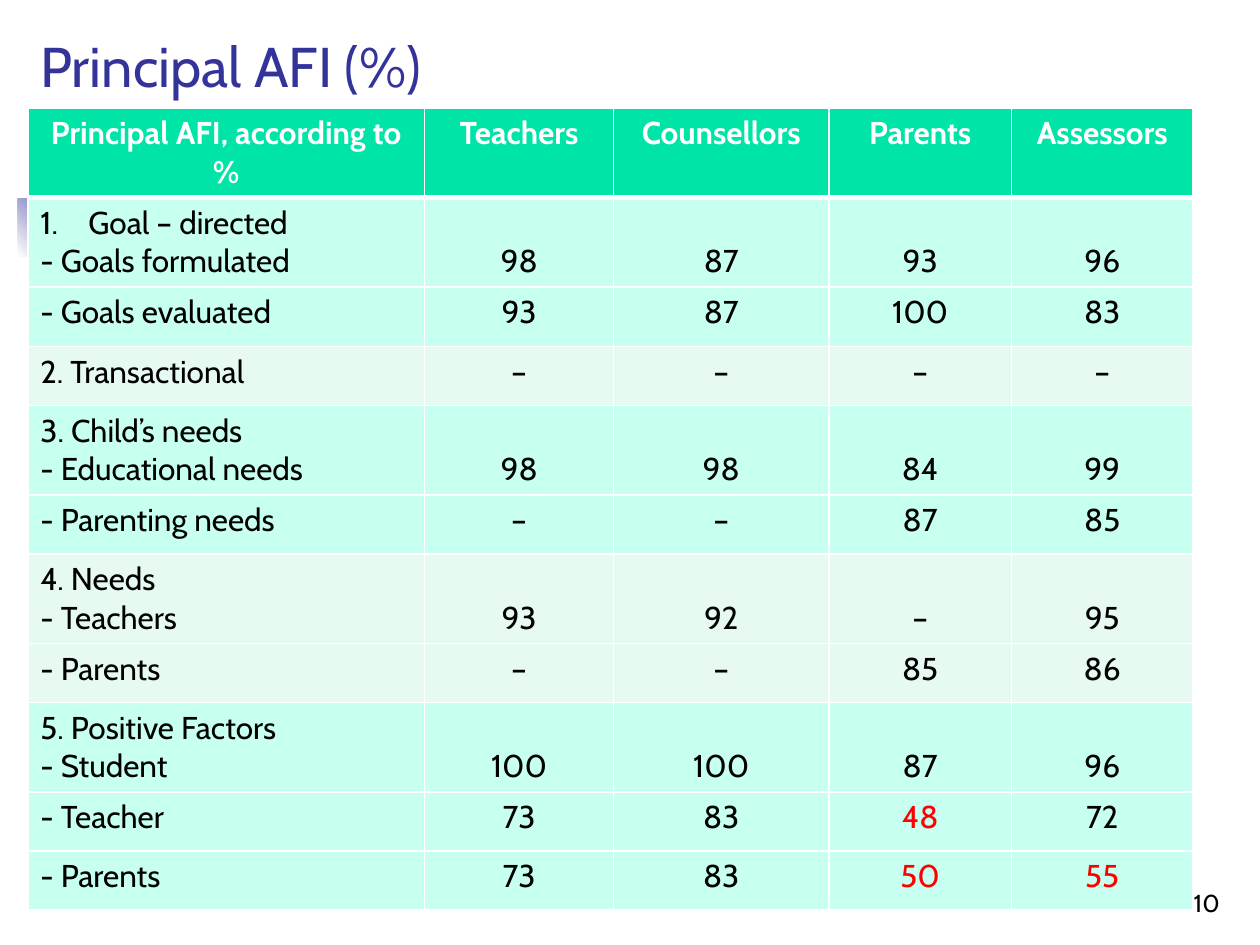
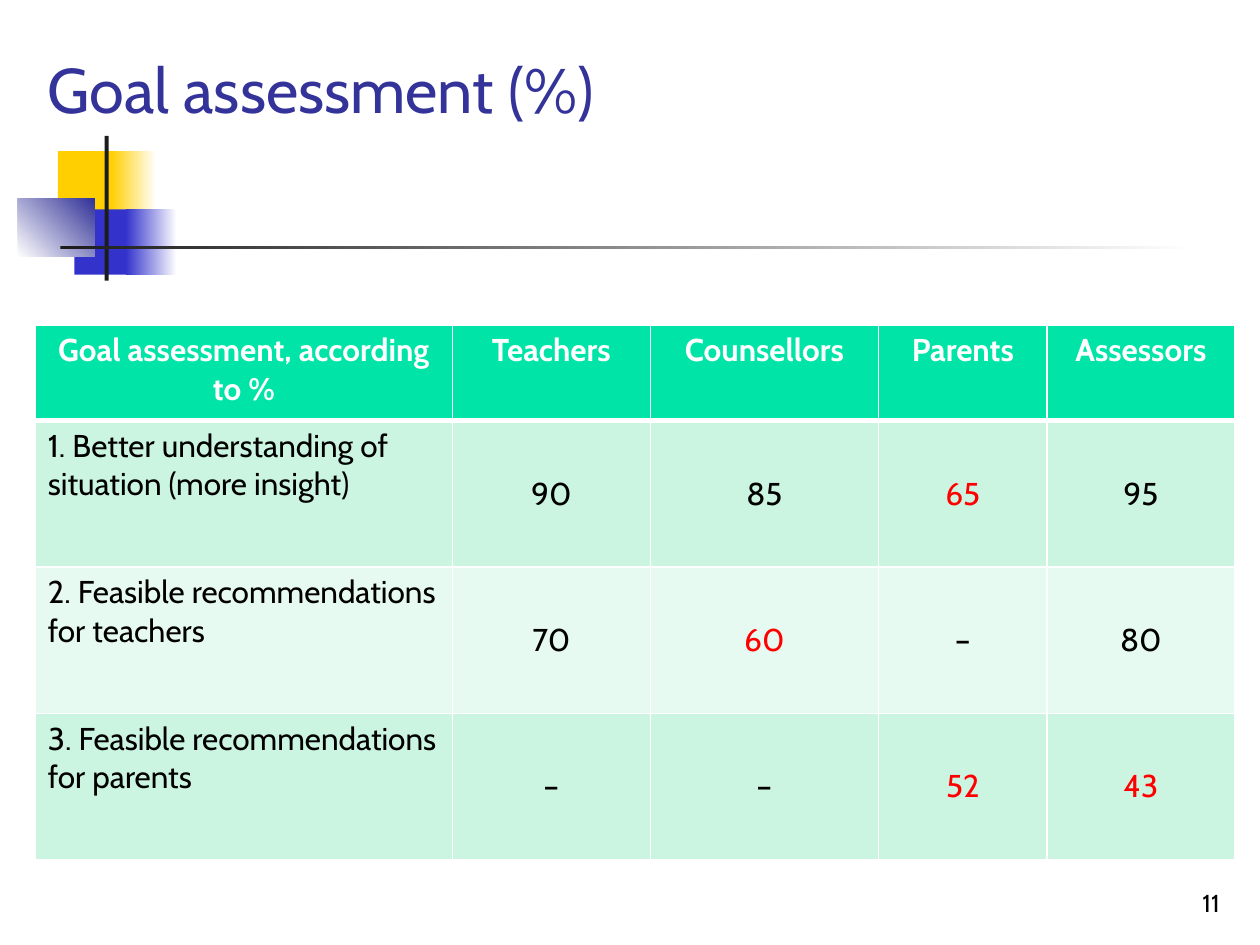
from pptx import Presentation
from pptx.dml.color import RGBColor
from pptx.enum.shapes import MSO_SHAPE as Shape
from pptx.enum.text import MSO_ANCHOR as Anchor, MSO_AUTO_SIZE as Fit, PP_ALIGN as Align
from pptx.oxml.ns import qn
from pptx.util import Cm, Pt
from lxml.etree import SubElement as Sub

FONT = "Cabin"
HUES = {
    "title": "333399", "white": "FFFFFF", "black": "000000", "red": "FF0000",
    "head": "00E4A8", "mint": "C7FFF0", "green": "CCF5E1", "pale": "E7FAF1",
    "gold": "FFCF01", "blue": "3333CC", "ink": "1C1C1C",
}
LOW = 70  # values below this are red
ROLES = ["Teachers", "Counsellors", "Parents", "Assessors"]

# Left, top, width, height in cm; first hue, last hue, angle
DECOR = [
    (1.17, 3.05, 1.22, 1.32, "gold", None, 0),
    (2.24, 3.05, 0.91, 1.32, "gold", "white", 0),
    (1.5, 4.22, 1.17, 1.32, "blue", None, 0),
    (2.54, 4.22, 1.02, 1.32, "blue", "white", 0),
    (0.36, 4.01, 1.55, 1.17, "white", "title", 45),
    (2.11, 2.74, 0.08, 2.92, "ink", None, 0),
    (1.22, 4.95, 22.86, 0.08, "ink", "white", 0),
]

# Each group holds rows of (label lines, values) and has one band colour
SLIDES = [
    {
        "title": "Principal AFI (%)", "size": 32, "box": (0.56, 0.48, 21.64, 1.63),
        "page": 10, "head": "Principal AFI, according to %",
        "at": (0.56, 2.18), "cols": [8, 3.81, 4.34, 3.68, 3.66],
        "top": 1.19, "rows": {1: 1.19, 2: 1.7},
        "bands": ["mint", "pale"], "anchors": {1: Anchor.TOP, 2: Anchor.BOTTOM},
        "numbered": "Goal – directed",
        "groups": [
            [(["Goal – directed", "- Goals formulated"], [98, 87, 93, 96]),
             (["- Goals evaluated"], [93, 87, 100, 83])],
            [(["2. Transactional"], ["–"] * 4)],
            [(["3. Child’s needs", "- Educational needs"], [98, 98, 84, 99]),
             (["- Parenting needs"], ["–", "–", 87, 85])],
            [(["4. Needs", "- Teachers"], [93, 92, "–", 95]),
             (["- Parents"], ["–", "–", 85, 86])],
            [(["5. Positive Factors", "- Student"], [100, 100, 87, 96]),
             (["- Teacher"], [73, 83, 48, 72]),
             (["- Parents"], [73, 83, 50, 55])],
        ],
    },
    {
        "title": "Goal assessment (%)", "size": 36, "box": (0.71, 0.53, 21.64, 2.13),
        "page": 11, "head": "Goal assessment, according to %",
        "at": (0.71, 6.55), "cols": [8.41, 3.99, 4.6, 3.4, 3.78],
        "top": 1.93, "rows": {1: 2.95},
        "bands": ["green", "pale"], "anchors": {1: Anchor.MIDDLE},
        "numbered": None,
        "groups": [
            [(["1. Better understanding of situation (more insight)"], [90, 85, 65, 95])],
            [(["2. Feasible recommendations for teachers"], [70, 60, "–", 80])],
            [(["3. Feasible recommendations for parents"], ["–", "–", 52, 43])],
        ],
    },
]


def hue(name):
    return RGBColor.from_string(HUES[name])


def style(para, size, name, align=Align.LEFT, bold=False):
    para.alignment = align
    font = para.font
    font.name, font.size, font.bold = FONT, Pt(size), bold
    font.color.rgb = hue(name)


def place(shape, box):
    shape.left, shape.top, shape.width, shape.height = map(Cm, box)


def decorate(slide):
    for *box, first, last, angle in DECOR:
        part = slide.shapes.add_shape(Shape.RECTANGLE, *map(Cm, box))
        part.shadow.inherit = False
        part.line.fill.background()
        if last:
            part.fill.gradient()
            part.fill.gradient_angle = angle
            for stop, name in zip(part.fill.gradient_stops, (first, last)):
                stop.color.rgb = hue(name)
        else:
            part.fill.solid()
            part.fill.fore_color.rgb = hue(first)


def border(cell, top=1, bottom=1):
    props = cell._tc.get_or_add_tcPr()
    for side, width in zip("LRTB", (1, 1, top, bottom)):
        line = Sub(props, qn(f"a:ln{side}"), w=str(Pt(width)))
        fill = Sub(line, qn("a:solidFill"))
        Sub(fill, qn("a:srgbClr"), val=HUES["white"])


def number(para):
    props = para._p.get_or_add_pPr()
    props.set("marL", str(Cm(0.97)))
    props.set("indent", str(-Cm(0.97)))
    Sub(props, qn("a:buFont"), typeface="+mj-lt")
    Sub(props, qn("a:buAutoNum"), type="arabicPeriod")
    # Bullet settings come before the default run settings
    props.append(props.find(qn("a:defRPr")))


def fill_cell(cell, lines, band, name="black", align=Align.CENTER,
              anchor=Anchor.TOP, bold=False, top=1, bottom=1):
    border(cell, top, bottom)
    cell.fill.solid()
    cell.fill.fore_color.rgb = hue(band)
    cell.vertical_anchor = anchor
    cell.text = "\n".join(lines)
    for para in cell.text_frame.paragraphs:
        style(para, 18, name, align, bold)


def add_grid(slide, data):
    # Flatten the groups; the band alternates from group to group
    rows = [(data["bands"][g % 2], *row)
            for g, group in enumerate(data["groups"]) for row in group]
    tall = [data["top"]] + [data["rows"][len(lines)] for _, lines, _ in rows]
    cols = data["cols"]
    size = (sum(cols), sum(tall))
    table = slide.shapes.add_table(
        len(tall), len(cols), *map(Cm, data["at"] + size)).table
    for col, width in zip(table.columns, cols):
        col.width = Cm(width)
    for row, height in zip(table.rows, tall):
        row.height = Cm(height)

    for c, text in enumerate([data["head"]] + ROLES):
        fill_cell(table.cell(0, c), [text], "head", "white", bold=True, bottom=3)
    for r, (band, lines, values) in enumerate(rows, 1):
        top = 3 if r == 1 else 1
        label = table.cell(r, 0)
        fill_cell(label, lines, band, align=Align.LEFT, top=top)
        if lines[0] == data["numbered"]:
            number(label.text_frame.paragraphs[0])
        for c, value in enumerate(values, 1):
            name = "red" if value != "–" and value < LOW else "black"
            fill_cell(table.cell(r, c), [str(value)], band, name,
                      anchor=data["anchors"][len(lines)], top=top)


def add_title(slide, data):
    title = slide.shapes.title
    place(title, data["box"])
    frame = title.text_frame
    frame.text = data["title"]
    frame.auto_size = Fit.NONE
    frame.vertical_anchor = Anchor.BOTTOM
    style(frame.paragraphs[0], data["size"], "title")


def add_page(slide, page):
    box = slide.shapes.add_textbox(*map(Cm, (19.56, 17.35, 5.28, 1.27)))
    frame = box.text_frame
    frame.word_wrap = True
    frame.vertical_anchor = Anchor.BOTTOM
    frame.text = str(page)
    style(frame.paragraphs[0], 14, "black", Align.RIGHT)


def main():
    deck = Presentation()
    deck.slide_width, deck.slide_height = Cm(25.4), Cm(19.05)
    for data in SLIDES:
        slide = deck.slides.add_slide(deck.slide_layouts[5])
        decorate(slide)
        add_title(slide, data)
        add_grid(slide, data)
        add_page(slide, data["page"])
    deck.save("out.pptx")


if __name__ == "__main__":
    main()
